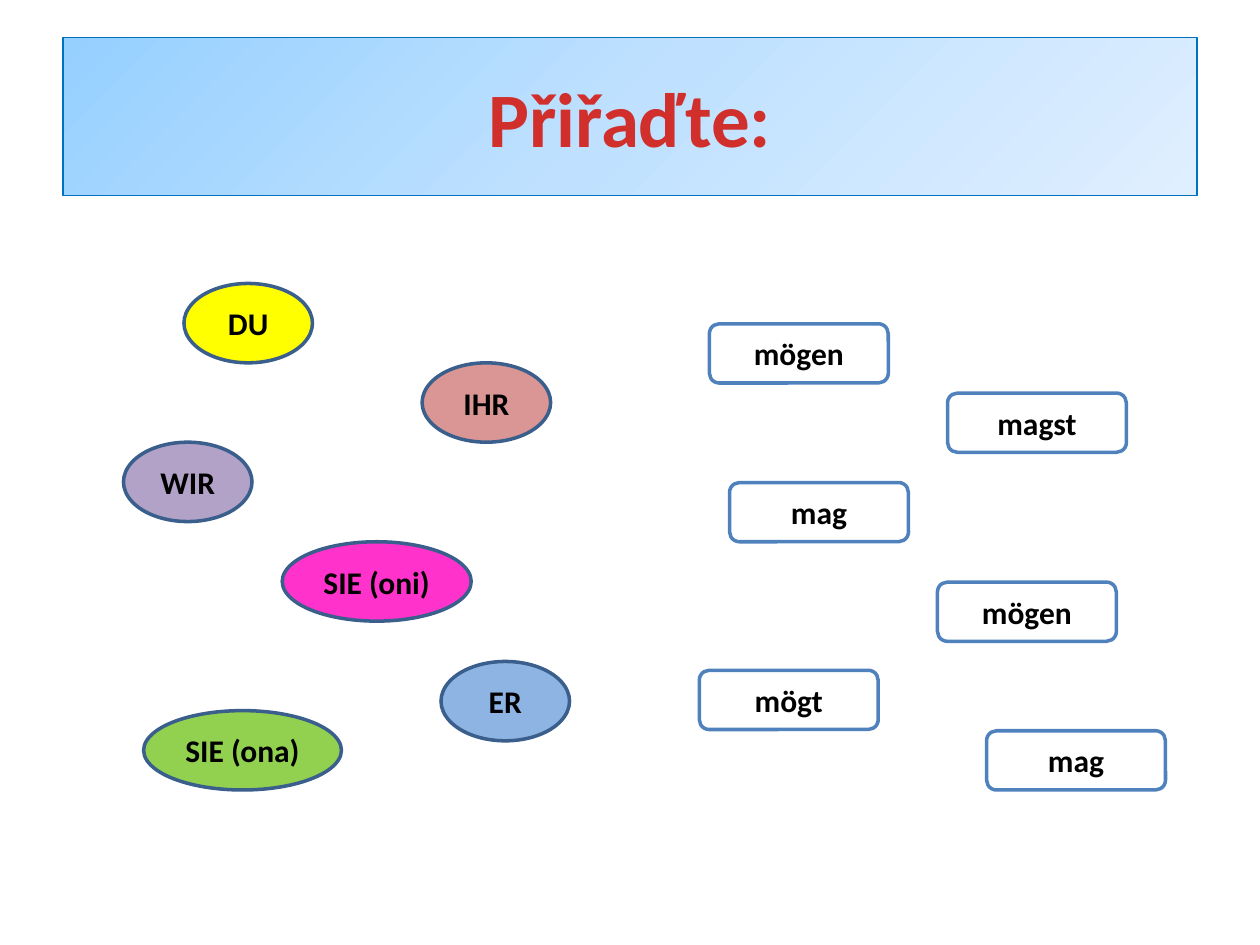
import copy

import pptx
import pptx.dml.color
import pptx.enum.shapes
import pptx.enum.text
import pptx.oxml.ns
import pptx.util

Inches = pptx.util.Inches
RGBColor = pptx.dml.color.RGBColor
MSO_SHAPE = pptx.enum.shapes.MSO_SHAPE

BLACK = RGBColor(0x00, 0x00, 0x00)
WHITE = RGBColor(0xFF, 0xFF, 0xFF)
TITLE_RED = RGBColor(0xD0, 0x2F, 0x2C)
TITLE_LINE = RGBColor(0x00, 0x70, 0xC0)
TITLE_GRADIENT = [
    (0, RGBColor(0x96, 0xD0, 0xFF)),
    (0.5, RGBColor(0xBF, 0xE1, 0xFF)),
    (1, RGBColor(0xE0, 0xEF, 0xFF)),
]
PRONOUN_LINE = RGBColor(0x3A, 0x5F, 0x8C)
VERB_LINE = RGBColor(0x4F, 0x81, 0xBD)
YELLOW = RGBColor(0xFF, 0xFF, 0x00)
PURPLE = RGBColor(0xB3, 0xA2, 0xC7)
ROSE = RGBColor(0xD9, 0x96, 0x94)
BLUE = RGBColor(0x8E, 0xB4, 0xE3)
PINK = RGBColor(0xFF, 0x33, 0xCC)
GREEN = RGBColor(0x92, 0xD0, 0x50)

presentation = pptx.Presentation()
presentation.slide_width = Inches(10)
presentation.slide_height = Inches(7.5)
slide = presentation.slides.add_slide(presentation.slide_layouts[6])


def add_label(text, *, kind, left, top, width, height, fill, line,
              line_width=2, size=18, color=BLACK):
    shape = slide.shapes.add_shape(
        kind, Inches(left), Inches(top), Inches(width), Inches(height))
    shape.shadow.inherit = False
    shape.fill.solid()
    shape.fill.fore_color.rgb = fill
    shape.line.color.rgb = line
    shape.line.width = pptx.util.Pt(line_width)
    frame = shape.text_frame
    frame.word_wrap = True
    frame.margin_left = frame.margin_right = Inches(0.05)
    frame.vertical_anchor = pptx.enum.text.MSO_ANCHOR.MIDDLE
    paragraph = frame.paragraphs[0]
    paragraph.alignment = pptx.enum.text.PP_ALIGN.CENTER
    run = paragraph.add_run()
    run.text = text
    run.font.name = "Calibri"
    run.font.size = pptx.util.Pt(size)
    run.font.bold = True
    run.font.color.rgb = color
    return shape


title = add_label("Přiřaďte:", kind=MSO_SHAPE.RECTANGLE, left=0.5, top=0.3,
                  width=9, height=1.25, fill=WHITE, line=TITLE_LINE,
                  line_width=0.75, size=44, color=TITLE_RED)
title.fill.gradient()
title.fill.gradient_angle = 315
stop_list = title._element.spPr.find(".//" + pptx.oxml.ns.qn("a:gsLst"))
stop_list.append(copy.deepcopy(stop_list[0]))
for stop, (position, color) in zip(title.fill.gradient_stops, TITLE_GRADIENT):
    stop.position = position
    stop.color.rgb = color

pronouns = [
    ("DU", 1.46, 2.25, 1.02, YELLOW),
    ("WIR", 0.98, 3.51, 1.02, PURPLE),
    ("IHR", 3.35, 2.88, 1.02, ROSE),
    ("ER", 3.5, 5.25, 1.02, BLUE),
    ("SIE (oni)", 2.24, 4.3, 1.5, PINK),
    ("SIE (ona)", 1.14, 5.64, 1.57, GREEN),
]
for text, left, top, width, fill in pronouns:
    add_label(text, kind=MSO_SHAPE.OVAL, left=left, top=top, width=width,
              height=0.63, fill=fill, line=PRONOUN_LINE)

verbs = [
    ("mögen", 5.63, 2.57),
    ("magst", 7.52, 3.12),
    ("mag", 7.83, 5.8),
    ("mag", 5.79, 3.83),
    ("mögen", 7.44, 4.62),
    ("mögt", 5.55, 5.32),
]
for text, left, top in verbs:
    add_label(text, kind=MSO_SHAPE.ROUNDED_RECTANGLE, left=left, top=top,
              width=1.42, height=0.47, fill=WHITE, line=VERB_LINE)

presentation.save("out.pptx")
